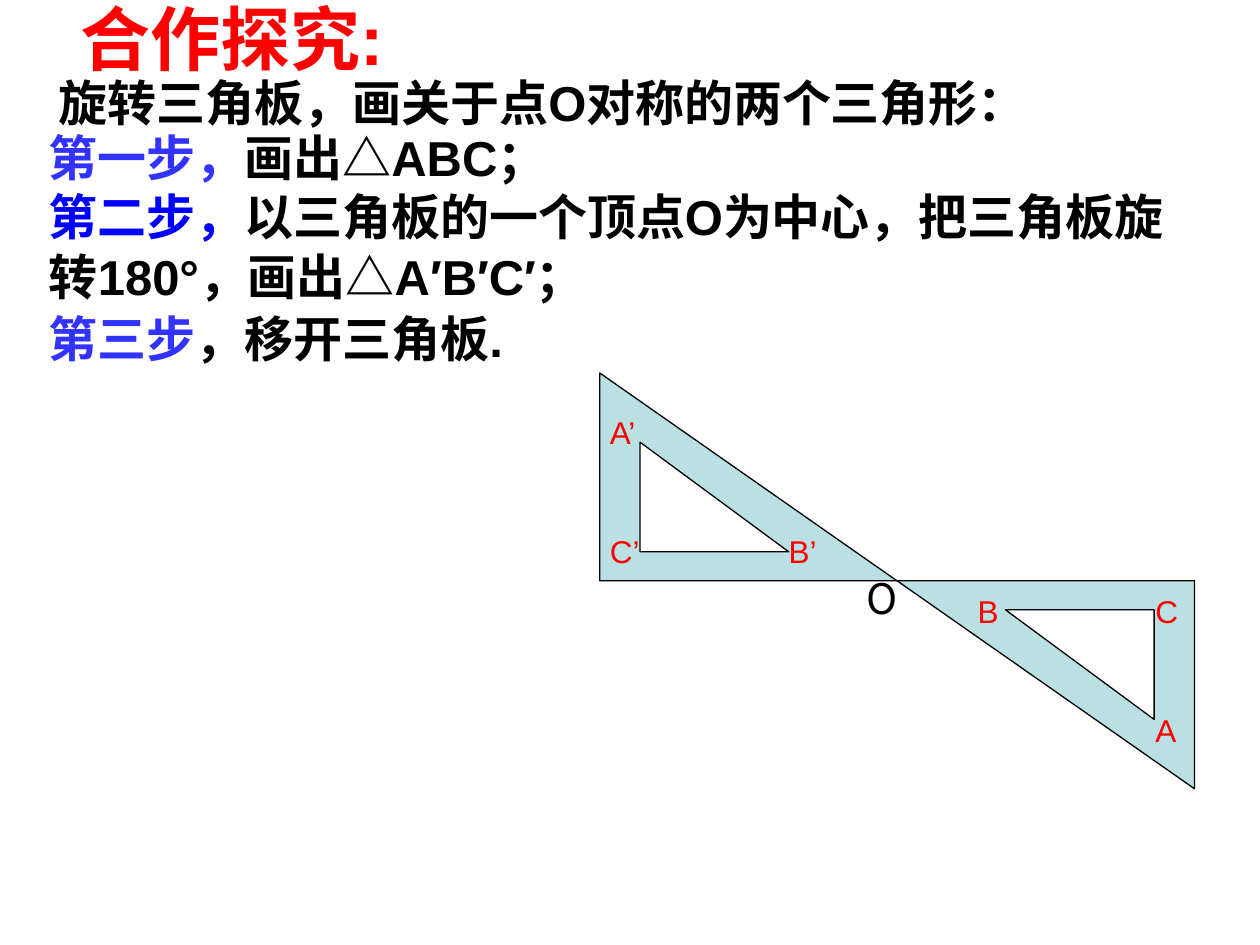
from lxml import etree
from pptx import Presentation
from pptx.dml.color import RGBColor
from pptx.enum.shapes import MSO_SHAPE
from pptx.enum.text import MSO_ANCHOR, MSO_AUTO_SIZE, PP_ALIGN
from pptx.oxml.ns import qn
from pptx.util import Inches, Pt

RIGHT_TRIANGLE = MSO_SHAPE.RIGHT_TRIANGLE
MIDDLE = MSO_ANCHOR.MIDDLE
CENTER = PP_ALIGN.CENTER
NO_AUTOSIZE = MSO_AUTO_SIZE.NONE

LATIN, HAN = "Arial", "Noto Sans CJK SC"
BLACK, RED, WHITE = "000000", "FF0000", "FFFFFF"
STEP_BLUE, DEEP_BLUE, BOARD = "3333FF", "0000FF", "BBE0E3"
CENTER_O = (7.12, 4.61)
BOARD_SIZE = (2.36, 1.65)
HOLE_SIZE = (1.18, 0.87)
HOLE_OFFSET = (0.32, 0.55)
LABEL_SIZE = (0.24, 0.3)


def color(hex_value):
    return RGBColor.from_string(hex_value)


def add_run(paragraph, text, size, hex_value, bold=False, latin=LATIN):
    run = paragraph.add_run()
    run.text = text
    font = run.font
    font.name, font.size, font.bold = latin, Pt(size), bold
    font.color.rgb = color(hex_value)
    han = etree.Element(qn("a:ea"), typeface=HAN)
    run._r.get_or_add_rPr().find(qn("a:latin")).addnext(han)


def add_text(shapes, box, runs, size, bold=False, latin=LATIN, pitch=None, inset=True):
    frame = shapes.add_textbox(*map(Inches, box)).text_frame
    frame.word_wrap = True
    if not inset:
        frame.margin_left = frame.margin_right = 0
        frame.margin_top = frame.margin_bottom = 0
    paragraph = frame.paragraphs[0]
    if pitch:
        paragraph.line_spacing = Pt(pitch)
    for text, hex_value in runs:
        add_run(paragraph, text, size, hex_value, bold, latin)


def add_triangle(shapes, corner, size, fill, rotation):
    triangle = shapes.add_shape(RIGHT_TRIANGLE, *map(Inches, (*corner, *size)))
    triangle.rotation = rotation
    triangle.shadow.inherit = False
    triangle.fill.solid()
    triangle.fill.fore_color.rgb = color(fill)
    triangle.line.color.rgb = color(BLACK)
    triangle.line.width = Pt(0.75)


def turn_about_center(corner, size):
    return tuple(2 * o - c - s for o, c, s in zip(CENTER_O, corner, size))


def add_set_square(slide, labels, turned):
    shapes = slide.shapes.add_group_shape().shapes
    board = tuple(o - s for o, s in zip(CENTER_O, BOARD_SIZE))
    hole = tuple(b + d for b, d in zip(board, HOLE_OFFSET))
    for corner, size, fill in ((board, BOARD_SIZE, BOARD), (hole, HOLE_SIZE, WHITE)):
        if turned:
            corner = turn_about_center(corner, size)
        add_triangle(shapes, corner, size, fill, 180 if turned else 0)
    for text, left, top in labels:
        add_text(shapes, (left, top, *LABEL_SIZE), [(text, RED)], 18, inset=False)


def add_title(slide, text):
    title = slide.shapes.title
    title.left, title.top, title.width, title.height = map(Inches, (0.35, 0, 2.99, 0.6))
    frame = title.text_frame
    frame.word_wrap = False
    frame.auto_size = NO_AUTOSIZE
    frame.vertical_anchor = MIDDLE
    paragraph = frame.paragraphs[0]
    paragraph.alignment = CENTER
    add_run(paragraph, text, 40, RED, True)


def main():
    deck = Presentation()
    deck.slide_width, deck.slide_height = Inches(10), Inches(7.5)
    slide = deck.slides.add_slide(deck.slide_layouts[5])
    add_title(slide, "合作探究:")

    instructions = (
        ((0.37, 0.52, 9.63, 0.57), [("旋转三角板，画关于点O对称的两个三角形：", BLACK)]),
        ((0.29, 0.96, 6.93, 0.57), [("第一步，", STEP_BLUE), ("画出△ABC；", BLACK)]),
        ((0.29, 1.43, 9.13, 1.03), [
            ("第二步，", DEEP_BLUE),
            ("以三角板的一个顶点O为中心，把三角板旋 转180°，画出△A′B′C′；", BLACK),
        ]),
        ((0.29, 2.39, 5.35, 0.57), [("第三步", STEP_BLUE), ("，移开三角板.", BLACK)]),
    )
    for box, runs in instructions:
        add_text(slide.shapes, box, runs, 28, bold=True, pitch=34)

    image_labels = (("A’", 4.84, 3.28), ("B’", 6.26, 4.22), ("C’", 4.84, 4.22))
    start_labels = (("A", 9.17, 5.64), ("B", 7.76, 4.7), ("C", 9.17, 4.7))
    add_set_square(slide, image_labels, turned=False)
    add_set_square(slide, start_labels, turned=True)
    add_text(slide.shapes, (6.78, 4.49, 0.47, 0.5), [("O", BLACK)], 24, latin=HAN, pitch=29)

    deck.save("out.pptx")


if __name__ == "__main__":
    main()
